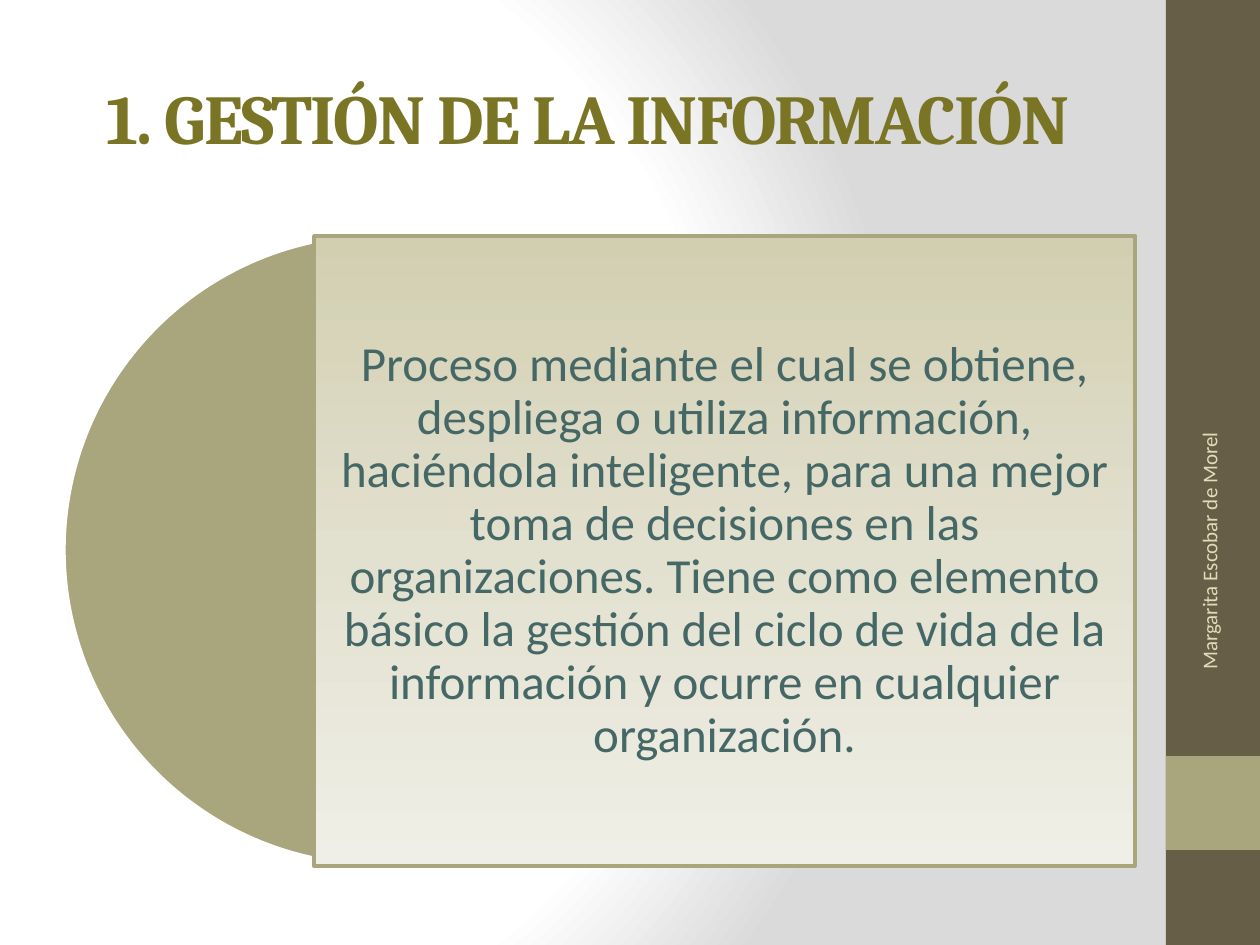
from pptx import Presentation
from pptx.dml.color import RGBColor
from pptx.enum.shapes import MSO_SHAPE as Shape
from pptx.enum.text import MSO_ANCHOR as Anchor, MSO_AUTO_SIZE as AutoSize, PP_ALIGN as Align
from pptx.oxml import parse_xml
from pptx.oxml.ns import nsdecls, qn
from pptx.util import Pt

PX = 914400 / 126
SLIDE_BOX = (0, 0, 1260, 945)

WHITE = RGBColor(0xFF, 0xFF, 0xFF)
GREY = RGBColor(0xDA, 0xDA, 0xDA)
BROWN = RGBColor(0x67, 0x5E, 0x47)
KHAKI = RGBColor(0xA9, 0xA5, 0x7C)
OLIVE = RGBColor(0x7A, 0x74, 0x25)
TEAL = RGBColor(0x45, 0x68, 0x67)
CREAM = RGBColor(0xDF, 0xDC, 0xB7)
PANEL_STOPS = [(0, RGBColor(0xD2, 0xCF, 0xB1)), (50, RGBColor(0xE2, 0xE0, 0xCE)),
               (100, RGBColor(0xF0, 0xEF, 0xE7))]
BACKGROUND_STOPS = [(0, WHITE), (75, WHITE), (100, GREY)]
DOWNWARD = '<a:lin ang="5400000" scaled="0"/>'
FROM_LEFT = ('<a:path path="circle"><a:fillToRect l="20000" t="50000" '
             'r="100000" b="50000"/></a:path>')

TITLE = "1. GESTIÓN DE LA INFORMACIÓN"
DEFINITION = (
    "Proceso mediante el cual se obtiene, despliega o utiliza información, "
    "haciéndola inteligente, para una mejor toma de decisiones en las organizaciones. "
    "Tiene como elemento básico la gestión del ciclo de vida de la información "
    "y ocurre en cualquier organización."
)
AUTHOR = "Margarita Escobar de Morel"


def emu(*lengths):
    return [round(length * PX) for length in lengths]


def set_gradient(fill, owner, stops, direction):
    """Give the fill, found inside the owner element, any number of stops."""
    fill.gradient()
    stop_xml = "".join(
        f'<a:gs pos="{pos * 1000}"><a:srgbClr val="{color}"/></a:gs>' for pos, color in stops)
    old = owner.find(".//" + qn("a:gradFill"))
    old.getparent().replace(old, parse_xml(
        f'<a:gradFill {nsdecls("a")} rotWithShape="1">'
        f"<a:gsLst>{stop_xml}</a:gsLst>{direction}</a:gradFill>"))


def add_block(slide, preset, box, color=None, line=None):
    block = slide.shapes.add_shape(preset, *emu(*box))
    block.shadow.inherit = False
    if color is not None:
        block.fill.solid()
        block.fill.fore_color.rgb = color
    if line is None:
        block.line.fill.background()
    else:
        block.line.color.rgb = line
        block.line.width = Pt(2)
    return block


def write(frame, text, align, color, **font):
    frame.word_wrap = True
    frame.auto_size = AutoSize.NONE
    frame.vertical_anchor = Anchor.MIDDLE
    paragraph = frame.paragraphs[0]
    paragraph.alignment = align
    run = paragraph.add_run()
    run.text = text
    run.font.color.rgb = color
    for name, value in font.items():
        setattr(run.font, name, value)
    return paragraph


def add_sidebar(slide, box):
    left, top, width, height = box
    add_block(slide, Shape.RECTANGLE, box, BROWN)
    add_block(slide, Shape.RECTANGLE, (left, top + 756, width, width), KHAKI)
    long, short = 326, 50
    author = slide.shapes.add_textbox(
        *emu(left + 43 - long / 2, top + 583 - short / 2, long, short))
    author.rotation = 270
    write(author.text_frame, AUTHOR, Align.RIGHT, CREAM, name="Calibri", size=Pt(12))


def place_title(slide, box):
    title = slide.shapes.title
    title.left, title.top, title.width, title.height = emu(*box)
    heading = write(title.text_frame, TITLE, Align.CENTER, OLIVE,
                    name="Cambria", size=Pt(40), bold=True)
    heading.runs[0].font._element.set("spc", "-100")


def add_definition(slide, box):
    """Half disc on the left, with the text panel starting near its centre."""
    left, top, width, height = box
    disc = add_block(slide, Shape.PIE, (left, top, height, height), KHAKI, WHITE)
    disc.adjustments[0], disc.adjustments[1] = 54, 162

    panel = add_block(slide, Shape.RECTANGLE,
                      (left + 250, top + 1, width - 250, height), line=KHAKI)
    set_gradient(panel.fill, panel.element.spPr, PANEL_STOPS, DOWNWARD)
    frame = panel.text_frame
    for side in ("left", "top", "right", "bottom"):
        setattr(frame, f"margin_{side}", emu(15)[0])
    paragraph = write(frame, DEFINITION, Align.CENTER, TEAL, name="Calibri", size=Pt(28))
    paragraph.line_spacing = 0.9


def main():
    deck = Presentation()
    deck.slide_width, deck.slide_height = emu(*SLIDE_BOX[2:])
    slide = deck.slides.add_slide(deck.slide_layouts[5])
    set_gradient(slide.background.fill, slide.element, BACKGROUND_STOPS, FROM_LEFT)
    add_sidebar(slide, (1166, 0, 94, 945))
    place_title(slide, (63, 38, 1050, 158))
    add_definition(slide, (64, 235, 1071, 630))
    deck.save("out.pptx")


if __name__ == "__main__":
    main()
